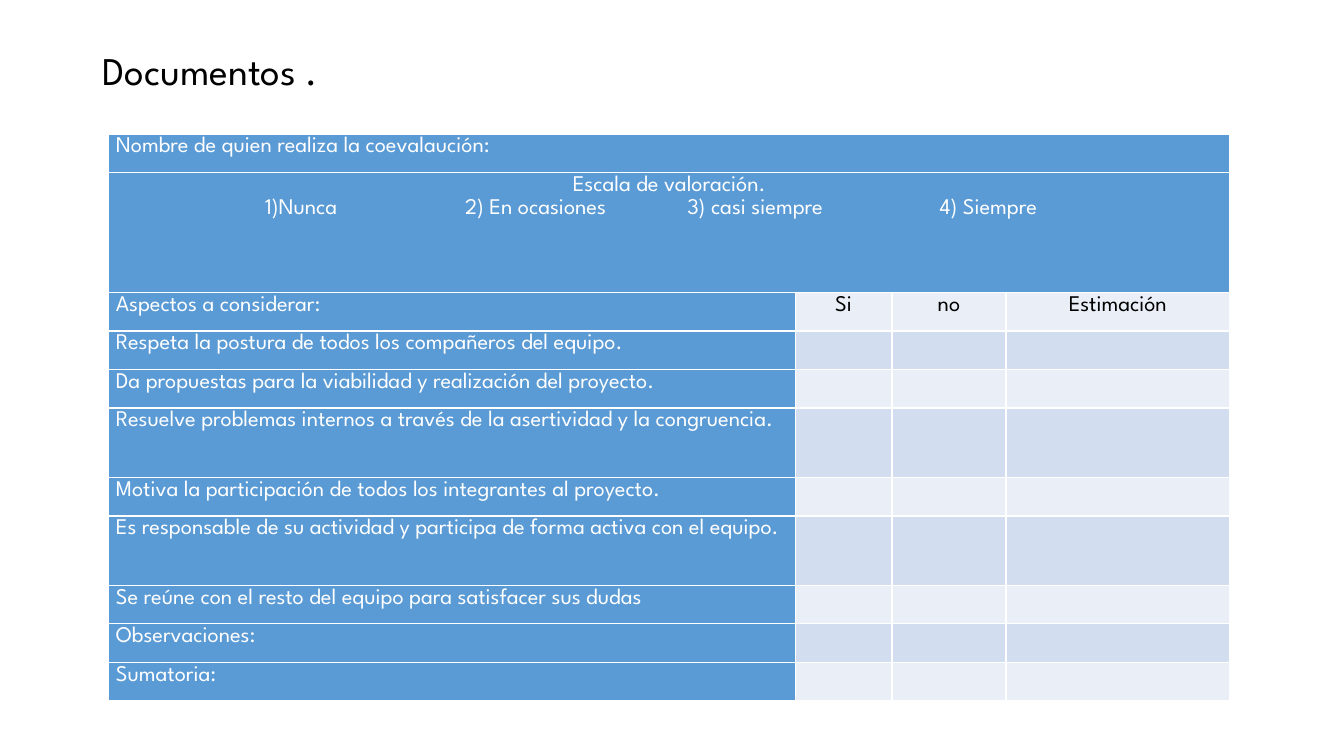
import lxml.etree
import pptx
import pptx.dml.color
import pptx.enum.text
import pptx.oxml.ns
import pptx.util

Cm = pptx.util.Cm
ALIGN = pptx.enum.text.PP_ALIGN
ANCHOR = pptx.enum.text.MSO_ANCHOR
qn = pptx.oxml.ns.qn

FONT = "League Spartan"
WHITE, BLACK, BLUE = "FFFFFF", "000000", "5B9BD5"
BANDS = ("EAEFF7", "D2DEEF")

COLUMN_WIDTHS = (17.3, 2.44, 2.87, 5.64)
ROW, TALL_ROW, SCALE_ROW = 0.97, 1.75, 3.02
SCALE_TABS = (3.76, 8.8, 14.4, 20.76)
SCALE = ("1)Nunca", "2) En ocasiones", "3) casi siempre", "4) Siempre")
ANSWERS = ("Si", "no", "Estimación")
ASPECTS = (
    ("Aspectos a considerar:", ROW),
    ("Respeta la postura de todos los compañeros del equipo.", ROW),
    ("Da propuestas para la viabilidad y realización del proyecto.", ROW),
    ("Resuelve problemas internos a través de la asertividad y la congruencia.", TALL_ROW),
    ("Motiva la participación de todos los integrantes al proyecto.", ROW),
    ("Es responsable de su actividad y participa de forma activa con el equipo.", TALL_ROW),
    ("Se reúne con el resto del equipo para satisfacer sus dudas", ROW),
    ("Observaciones:", ROW),
    ("Sumatoria:", ROW),
)


def rgb(value):
    return pptx.dml.color.RGBColor.from_string(value)


def write(p, text, size=16, color=WHITE, align=ALIGN.LEFT, spacing=1.15):
    p.alignment = align
    p.line_spacing = spacing
    r = p.add_run()
    r.text = text
    r.font.name = FONT
    r.font.size = pptx.util.Pt(size)
    r.font.color.rgb = rgb(color)


def set_tabs(p, stops):
    tabs = lxml.etree.SubElement(p._p.get_or_add_pPr(), qn("a:tabLst"))
    for stop in stops:
        lxml.etree.SubElement(tabs, qn("a:tab"), pos=str(Cm(stop)), algn="l")


def format_cell(cell, fill):
    """Set margins, white borders and fill; borders must precede the fill."""
    cell.margin_left = cell.margin_right = Cm(0.18)
    cell.margin_top = cell.margin_bottom = 0
    tcPr = cell._tc.get_or_add_tcPr()
    for side in ("L", "R", "T", "B"):
        ln = lxml.etree.SubElement(tcPr, qn(f"a:ln{side}"), w=str(pptx.util.Pt(1)))
        solid = lxml.etree.SubElement(ln, qn("a:solidFill"))
        lxml.etree.SubElement(solid, qn("a:srgbClr"), val=WHITE)
    cell.fill.solid()
    cell.fill.fore_color.rgb = rgb(fill)


def add_title(s, text, left, top, width, height):
    sp = s.shapes.title
    sp.left, sp.top, sp.width, sp.height = Cm(left), Cm(top), Cm(width), Cm(height)
    tf = sp.text_frame
    tf.word_wrap = True
    tf.auto_size = pptx.enum.text.MSO_AUTO_SIZE.NONE
    tf.vertical_anchor = ANCHOR.MIDDLE
    write(tf.paragraphs[0], text, size=28, color=BLACK, spacing=0.9)


def add_evaluation_table(s, left, top):
    heights = [ROW, SCALE_ROW] + [height for _, height in ASPECTS]
    table = s.shapes.add_table(
        len(heights), len(COLUMN_WIDTHS), Cm(left), Cm(top),
        Cm(sum(COLUMN_WIDTHS)), Cm(sum(heights))).table
    for column, width in zip(table.columns, COLUMN_WIDTHS):
        column.width = Cm(width)
    for i, height in enumerate(heights):
        table.rows[i].height = Cm(height)
        for j in range(len(COLUMN_WIDTHS)):
            format_cell(table.cell(i, j), BLUE if i < 2 or j == 0 else BANDS[i % 2])
    for i in range(2):
        table.cell(i, 0).merge(table.cell(i, len(COLUMN_WIDTHS) - 1))

    write(table.cell(0, 0).text_frame.paragraphs[0],
          "Nombre de quien realiza la coevalaución:")
    tf = table.cell(1, 0).text_frame
    write(tf.paragraphs[0], "Escala de valoración.", align=ALIGN.CENTER)
    p = tf.add_paragraph()
    set_tabs(p, SCALE_TABS)
    write(p, "".join(f"\t{level}" for level in SCALE))

    for i, (aspect, _) in enumerate(ASPECTS, start=2):
        write(table.cell(i, 0).text_frame.paragraphs[0], aspect, align=ALIGN.JUSTIFY)
    for j, answer in enumerate(ANSWERS, start=1):
        write(table.cell(2, j).text_frame.paragraphs[0], answer,
              color=BLACK, align=ALIGN.CENTER)


def main():
    prs = pptx.Presentation()
    prs.slide_width, prs.slide_height = Cm(33.87), Cm(19.05)
    s = prs.slides.add_slide(prs.slide_layouts[5])
    add_title(s, "Documentos .", 2.33, 1.02, 29.21, 1.63)
    add_evaluation_table(s, 2.74, 3.38)
    prs.save("out.pptx")


if __name__ == "__main__":
    main()
